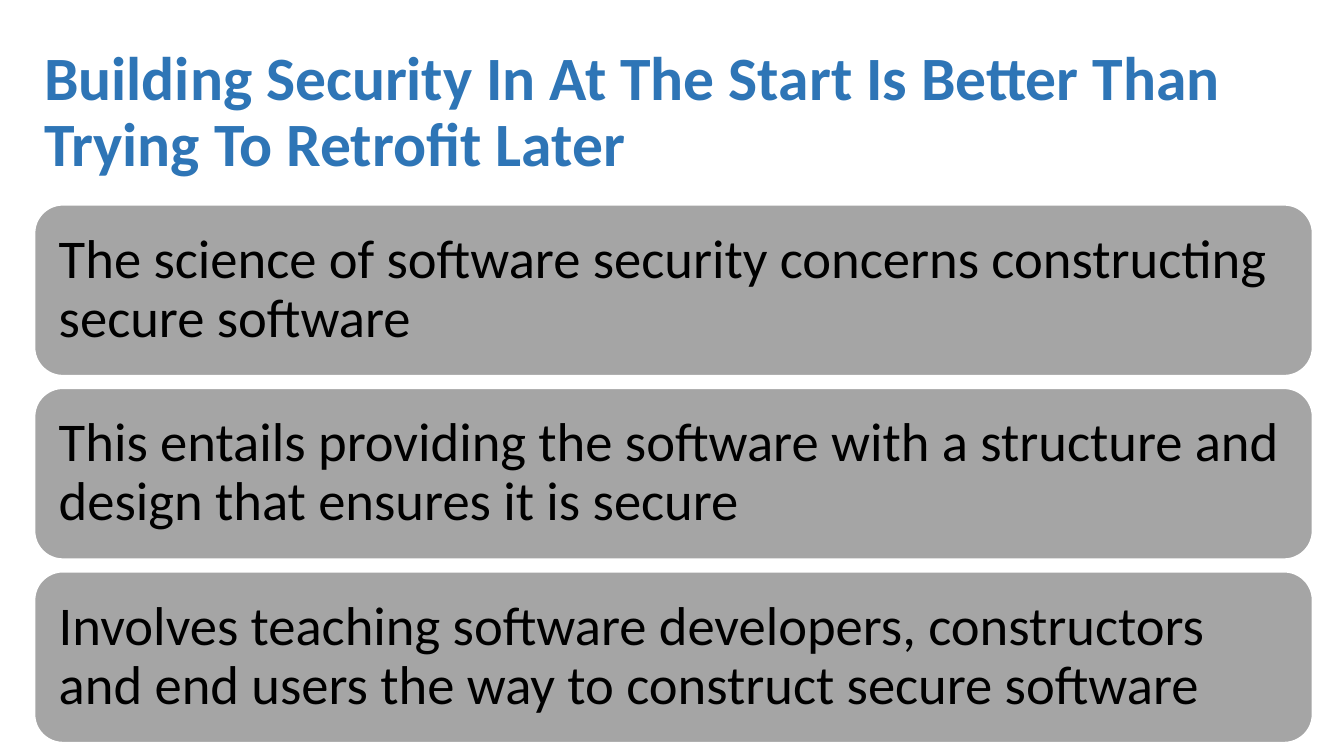
from pptx import Presentation
from pptx.dml.color import RGBColor
from pptx.enum.shapes import MSO_SHAPE
from pptx.enum.text import MSO_ANCHOR, PP_ALIGN
from pptx.util import Inches, Pt

COLORS = {"heading": "2E75B6", "card": "A5A5A5", "edge": "FFFFFF", "body": "000000"}
HEADING = "Building Security In At The Start Is Better Than Trying To Retrofit Later"
POINTS = [
    "The science of software security concerns constructing secure software",
    "This entails providing the software with a structure and design that ensures it is secure",
    "Involves teaching software developers, constructors and end users the way to construct secure software",
]
LEFT, WIDTH = 0.34, 12.68
CARD_HEIGHT, CARD_GAP = 1.7, 0.12


def rgb(role):
    """Return the colour used for a role."""
    return RGBColor.from_string(COLORS[role])


def write(frame, wording, role, size, bold, margins):
    """Fill a text frame with one left-aligned, vertically centred paragraph."""
    frame_format = {"word_wrap": True, "vertical_anchor": MSO_ANCHOR.MIDDLE}
    for side, margin in zip(("left", "top", "right", "bottom"), margins):
        frame_format[f"margin_{side}"] = Inches(margin)
    for key, value in frame_format.items():
        setattr(frame, key, value)
    paragraph = frame.paragraphs[0]
    for key, value in {"alignment": PP_ALIGN.LEFT, "line_spacing": 0.9}.items():
        setattr(paragraph, key, value)
    run = paragraph.add_run()
    run.text = wording
    for key, value in {"name": "Calibri", "size": Pt(size), "bold": bold}.items():
        setattr(run.font, key, value)
    run.font.color.rgb = rgb(role)


def add_heading(slide, left, top, width, height):
    """Place the slide heading in the given box."""
    heading = slide.shapes.add_textbox(*map(Inches, (left, top, width, height)))
    write(heading.text_frame, HEADING, "heading", 44, True, (0.1, 0.05, 0.1, 0.05))


def add_cards(slide, left, top, width):
    """Stack one rounded card per point downwards from the given corner."""
    for index, point in enumerate(POINTS):
        card_top = top + index * (CARD_HEIGHT + CARD_GAP)
        card = slide.shapes.add_shape(
            MSO_SHAPE.ROUNDED_RECTANGLE, *map(Inches, (left, card_top, width, CARD_HEIGHT))
        )
        card.shadow.inherit = False
        card.fill.solid()
        card.fill.fore_color.rgb = rgb("card")
        card.line.color.rgb = rgb("edge")
        card.line.width = Pt(1.5)
        card.adjustments[0] = 0.1667
        write(card.text_frame, point, "body", 39, False, (0.16, 0.16, 0.16, 0.16))


def main():
    """Build and save the slide."""
    deck = Presentation()
    deck.slide_width, deck.slide_height = Inches(13.33), Inches(7.5)
    slide = deck.slides.add_slide(deck.slide_layouts[6])
    add_heading(slide, LEFT, 0.4, WIDTH, 1.45)
    add_cards(slide, LEFT, 2.03, WIDTH)
    deck.save("out.pptx")


if __name__ == "__main__":
    main()
